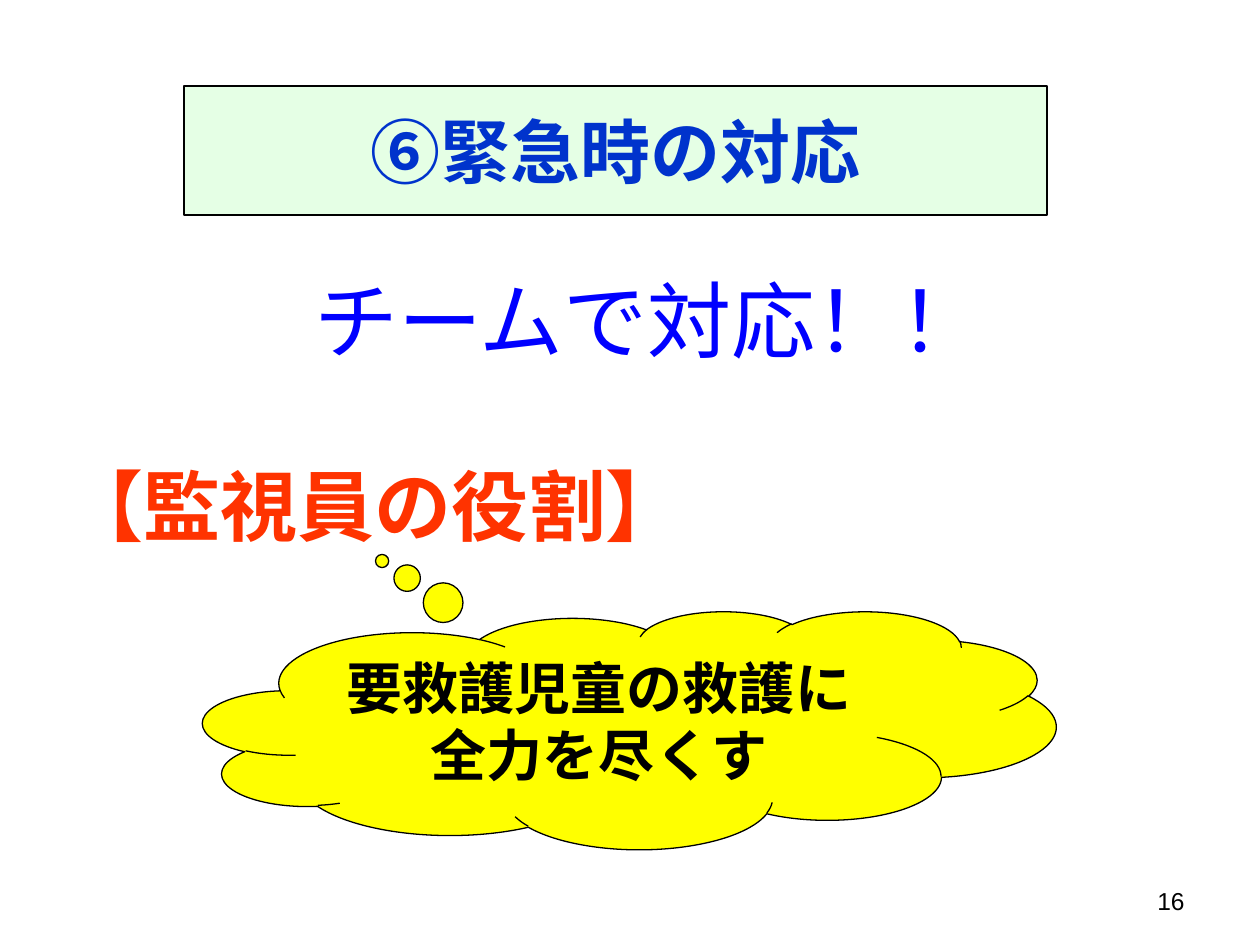
from dataclasses import dataclass

from lxml.etree import SubElement
from pptx import Presentation
from pptx.dml.color import RGBColor
from pptx.enum.shapes import MSO_SHAPE
from pptx.enum.text import MSO_ANCHOR, MSO_AUTO_SIZE, PP_ALIGN
from pptx.oxml.ns import qn
from pptx.util import Emu, Pt

SCALE = 914400 / 126


def px(n):
    """Turn whole px into EMU."""
    return Emu(round(n * SCALE))


@dataclass(frozen=True)
class Theme:
    """Colours, type sizes and font of the slide."""
    font: str = "Arial"
    title: str = "0033CC"
    title_fill: str = "CCFFCC"
    slogan: str = "0000FF"
    role: str = "FF3300"
    cloud: str = "FFFF00"
    ink: str = "000000"
    title_size: int = 40
    slogan_size: int = 48
    role_size: int = 44
    cloud_size: int = 32
    number_size: int = 14
    line: float = 0.75


class Builder:
    """Draws styled elements on the current slide."""

    def __init__(self, slide, theme):
        """Keep the slide and its theme."""
        self.s, self.t = slide, theme

    def add_text(self, sp, text, size, color, bold=False, align=PP_ALIGN.LEFT,
                 anchor=MSO_ANCHOR.TOP, wrap=True):
        """Put one styled run into a shape."""
        tf = sp.text_frame
        tf.auto_size = MSO_AUTO_SIZE.NONE
        tf.word_wrap, tf.vertical_anchor = wrap, anchor
        p = tf.paragraphs[0]
        p.alignment = align
        r = p.add_run()
        r.text = text
        r.font.name, r.font.size, r.font.bold = self.t.font, Pt(size), bold
        r.font.color.rgb = RGBColor.from_string(color)

    def paint(self, sp, color, alpha=100):
        """Fill and outline a shape."""
        sp.fill.solid()
        sp.fill.fore_color.rgb = RGBColor.from_string(color)
        if alpha < 100:
            clr = sp.element.spPr.find(qn("a:solidFill")).find(qn("a:srgbClr"))
            SubElement(clr, qn("a:alpha")).set("val", str(alpha * 1000))
        sp.line.color.rgb = RGBColor.from_string(self.t.ink)
        sp.line.width = Pt(self.t.line)

    def title(self, box, text):
        """Place the framed title."""
        sp = self.s.shapes.title
        sp.left, sp.top, sp.width, sp.height = map(px, box)
        self.paint(sp, self.t.title_fill, 50)
        self.add_text(sp, text, self.t.title_size, self.t.title, True,
                      PP_ALIGN.CENTER, MSO_ANCHOR.MIDDLE, False)

    def text(self, box, text, size, color, **style):
        """Add a text box."""
        sp = self.s.shapes.add_textbox(*map(px, box))
        self.add_text(sp, text, size, color, **style)

    def cloud(self, box, text, tail):
        """Add a thought cloud with its tail offset."""
        sp = self.s.shapes.add_shape(MSO_SHAPE.CLOUD_CALLOUT, *map(px, box))
        sp.shadow.inherit = False
        sp.adjustments[0], sp.adjustments[1] = tail
        self.paint(sp, self.t.cloud)
        self.add_text(sp, text, self.t.cloud_size, self.t.ink, True, PP_ALIGN.CENTER)


def main():
    """Build and save the slide."""
    prs = Presentation()
    prs.slide_width, prs.slide_height = px(1260), px(945)
    t = Theme()
    b = Builder(prs.slides.add_slide(prs.slide_layouts[5]), t)
    b.title((184, 86, 863, 129), "⑥緊急時の対応")
    b.text((302, 262, 714, 115), "チームで対応！！", t.slogan_size, t.slogan)
    b.text((54, 452, 684, 106), "【監視員の役割】", t.role_size, t.role, bold=True)
    b.cloud((203, 611, 853, 238), "要救護児童の救護に全力を尽くす", (-0.29, -0.71))
    b.text((903, 876, 294, 50), "16", t.number_size, t.ink,
           align=PP_ALIGN.RIGHT, anchor=MSO_ANCHOR.MIDDLE)
    prs.save("out.pptx")


if __name__ == "__main__":
    main()
